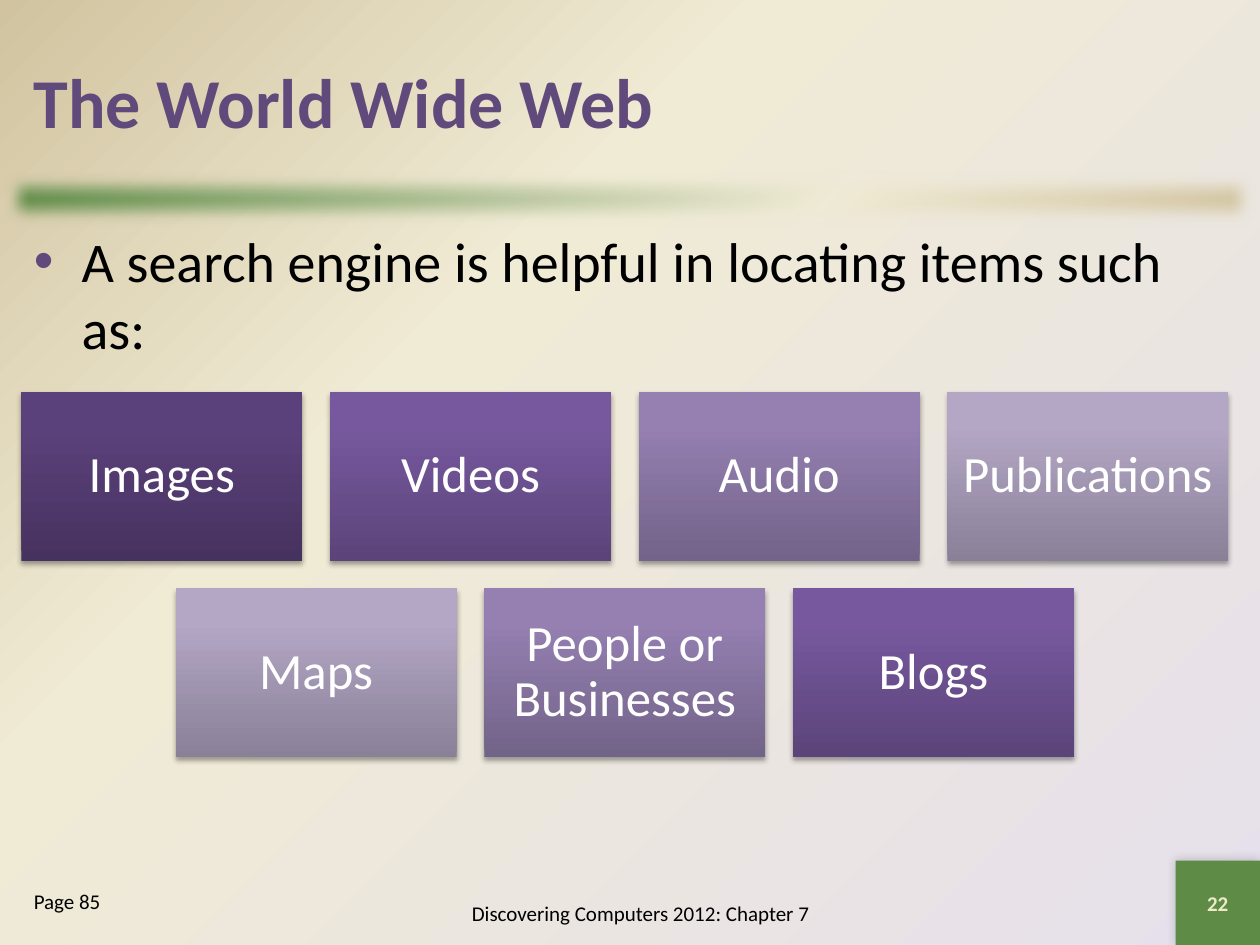
"""Build the World Wide Web slide about what a search engine can locate."""
from lxml import etree
from pptx import Presentation
from pptx import util as u
from pptx.dml import color
from pptx.enum import shapes, text
from pptx.oxml import ns

PURPLE, GREEN, CREAM, SAND = "604A7B", "5E8B46", "F0EBD5", "D1C39F"
TILE_W, TILE_H, GAP = 2.23, 1.34, 0.22
TILES_LEFT, TILES_TOP, TILES_MID = 0.17, 3.11, 4.96

DARK = ("46325F", "5B417B", "5B407C")
DEEP = ("5B447A", "77589E", "7757A0")
MEDIUM = ("726389", "9580B1", "9580B3")
LIGHT = ("8A8098", "B3A7C5", "B4A7C7")
ROWS = [
    [("Images", DARK), ("Videos", DEEP), ("Audio", MEDIUM), ("Publications", LIGHT)],
    [("Maps", LIGHT), ("People or Businesses", MEDIUM), ("Blogs", DEEP)],
]


def rgb(value):
    return color.RGBColor.from_string(value)


def add(parent, tag, **attrs):
    return etree.SubElement(parent, ns.qn(tag), {k: str(v) for k, v in attrs.items()})


def set_gradient(fill, root, stops, angle=None):
    """Fill with stops, linear at an angle or circular from the lower right."""
    fill.gradient()
    grad = next(root.iter(ns.qn("a:gradFill")))
    for child in list(grad):
        grad.remove(child)
    stop_list = add(grad, "a:gsLst")
    for position, value in stops:
        add(add(stop_list, "a:gs", pos=position * 1000), "a:srgbClr", val=value)
    if angle is None:
        circle = add(grad, "a:path", path="circle")
        add(circle, "a:fillToRect", l=100000, t=100000)
    else:
        add(grad, "a:lin", ang=angle * 60000, scaled=0)


def write(sp, content, size, value="000000", bold=False, align=text.PP_ALIGN.LEFT,
          anchor=text.MSO_ANCHOR.MIDDLE, inset=None, spacing=None, bullet=None):
    """Put one formatted paragraph into a shape."""
    tf = sp.text_frame
    tf.word_wrap = True
    tf.vertical_anchor = anchor
    if inset is not None:
        tf.margin_left = tf.margin_right = tf.margin_top = tf.margin_bottom = u.Inches(inset)
    p = tf.paragraphs[0]
    p.alignment = align
    if spacing:
        p.line_spacing = spacing
    if bullet:
        ppr = p._p.get_or_add_pPr()
        ppr.set("marL", str(u.Inches(0.38)))
        ppr.set("indent", str(-u.Inches(0.38)))
        add(add(ppr, "a:buClr"), "a:srgbClr", val=bullet)
        add(ppr, "a:buFont", typeface="Arial")
        add(ppr, "a:buChar", char="•")
    r = p.add_run()
    r.text = content
    r.font.name = "Calibri"
    r.font.size = u.Pt(size)
    r.font.bold = bold
    r.font.color.rgb = rgb(value)


class Deck:
    """Hold the presentation, its style and the current slide."""

    def __init__(self):
        self.prs = Presentation()
        self.prs.slide_width, self.prs.slide_height = u.Inches(10), u.Inches(7.5)
        self.s = self.prs.slides.add_slide(self.prs.slide_layouts[6])
        self.theme = [(0, GREEN), (65, CREAM), (100, SAND)]

    def background(self):
        stops = [(0, "E6E0EC")] + self.theme[1:]
        set_gradient(self.s.background.fill, self.s._element, stops)

    def label(self, box, content, size, **style):
        sp = self.s.shapes.add_textbox(*map(u.Inches, box))
        write(sp, content, size, **style)

    def block(self, box, fill=None, stops=None, angle=270):
        sp = self.s.shapes.add_shape(shapes.MSO_SHAPE.RECTANGLE, *map(u.Inches, box))
        sp.shadow.inherit = False
        sp.line.fill.background()
        if stops:
            set_gradient(sp.fill, sp._element, stops, angle)
        else:
            sp.fill.solid()
            sp.fill.fore_color.rgb = rgb(fill)
        return sp

    def shadow(self, sp, alpha, blur, dist, angle):
        effects = sp._element.spPr.find(ns.qn("a:effectLst"))
        outer = add(effects, "a:outerShdw", blurRad=u.Pt(blur), dist=u.Pt(dist),
                    dir=angle * 60000, rotWithShape=0)
        add(add(outer, "a:srgbClr", val="000000"), "a:alpha", val=alpha * 1000)

    def divider(self):
        sp = self.block((0, 1.33, 10, 0.5), stops=self.theme, angle=45)
        add(sp._element.spPr.find(ns.qn("a:effectLst")), "a:softEdge", rad=u.Pt(10))

    def page_number(self, number):
        sp = self.block((9.33, 6.83, 0.67, 0.67), fill=GREEN)
        self.shadow(sp, 20, 6, 0, 225)
        write(sp, number, 12, value="EEEBCA", bold=True, align=text.PP_ALIGN.CENTER)

    def tile(self, left, top, content, shades):
        sp = self.block((left, top, TILE_W, TILE_H), stops=zip((0, 80, 100), shades))
        self.shadow(sp, 35, 3.1, 1.8, 90)
        write(sp, content, 29, value="FFFFFF", align=text.PP_ALIGN.CENTER,
              inset=0.12, spacing=0.9)

    def tiles(self, rows):
        for i, row in enumerate(rows):
            width = len(row) * (TILE_W + GAP) - GAP
            for j, (content, shades) in enumerate(row):
                left = TILES_MID - width / 2 + j * (TILE_W + GAP)
                self.tile(left, TILES_TOP + i * (TILE_H + GAP), content, shades)


def main():
    deck = Deck()
    deck.background()
    deck.divider()
    deck.page_number("22")
    deck.label((TILES_LEFT, 0.17, 9.67, 1.25), "The World Wide Web", 40,
               value=PURPLE, bold=True)
    deck.label((TILES_LEFT, 1.75, 9.67, 5.08),
               "A search engine is helpful in locating items such as:", 32,
               anchor=text.MSO_ANCHOR.TOP, bullet=PURPLE)
    deck.label((3, 7, 4.17, 0.5), "Discovering Computers 2012: Chapter 7", 12,
               align=text.PP_ALIGN.CENTER)
    deck.label((TILES_LEFT, 7, 1.83, 0.5), "Page 85", 12, anchor=text.MSO_ANCHOR.TOP)
    deck.tiles(ROWS)
    deck.prs.save("out.pptx")


if __name__ == "__main__":
    main()
